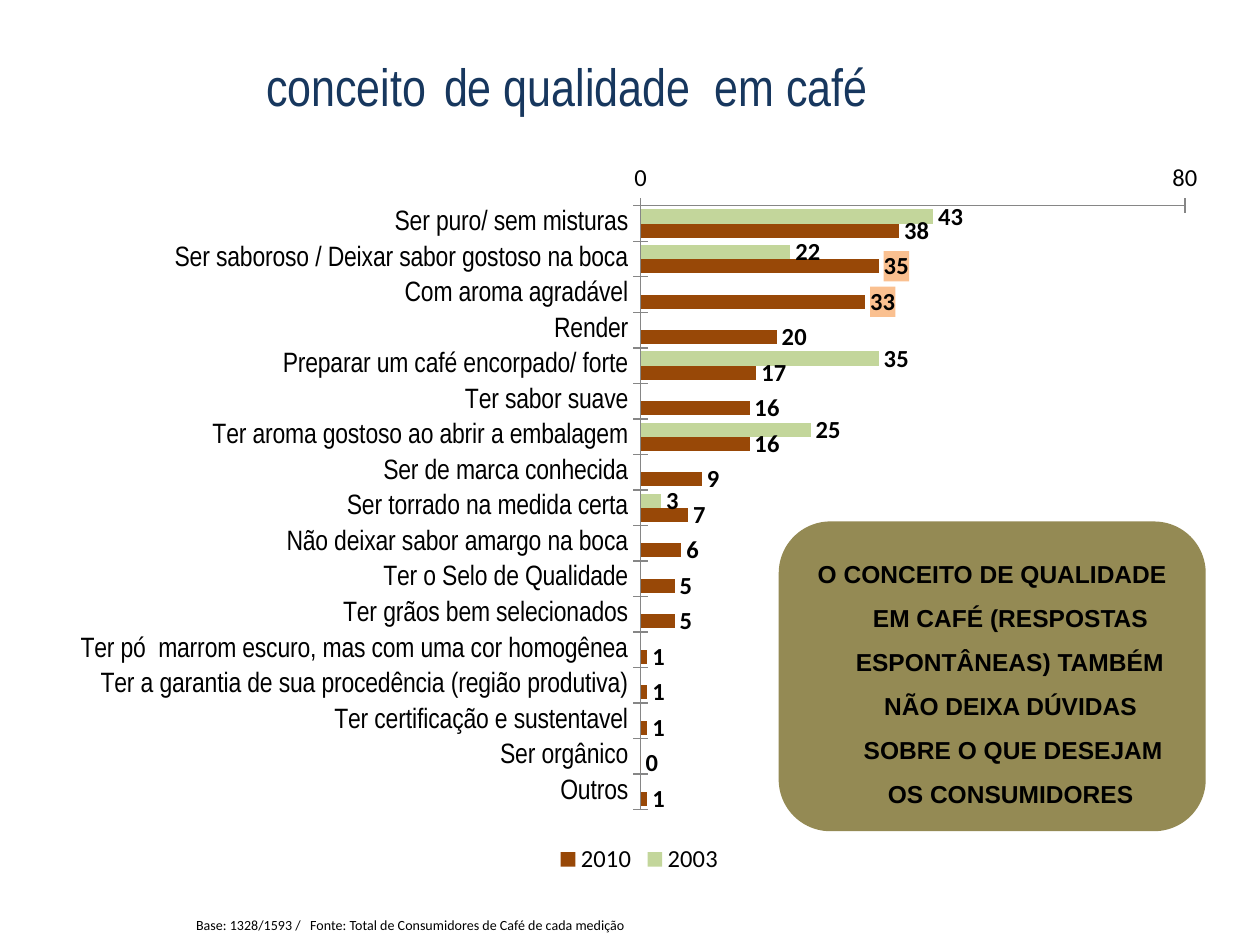
import pptx
import pptx.chart.data
import pptx.dml.color
import pptx.enum.chart
import pptx.enum.shapes
import pptx.enum.text
import pptx.oxml
import pptx.oxml.ns
import pptx.util

Pt = pptx.util.Pt
RGBColor = pptx.dml.color.RGBColor
BLACK = RGBColor(0, 0, 0)
NAVY = RGBColor(0x17, 0x37, 0x5E)
GREEN = RGBColor(0xC3, 0xD6, 0x9B)
BROWN = RGBColor(0x98, 0x48, 0x07)
OLIVE = RGBColor(0x94, 0x8A, 0x54)
PEACH = RGBColor(0xFA, 0xC0, 0x90)
GREY = RGBColor(0x86, 0x86, 0x86)

ANSWERS = [
    ("Ser puro/ sem misturas", 43, 38),
    ("Ser saboroso / Deixar sabor gostoso na boca", 22, 35),
    ("Com aroma agradável", None, 33),
    ("Render", None, 20),
    ("Preparar um café encorpado/ forte", 35, 17),
    ("Ter sabor suave", None, 16),
    ("Ter aroma gostoso ao abrir a embalagem", 25, 16),
    ("Ser de marca conhecida", None, 9),
    ("Ser torrado na medida certa", 3, 7),
    ("Não deixar sabor amargo na boca", None, 6),
    ("Ter o Selo de Qualidade", None, 5),
    ("Ter grãos bem selecionados", None, 5),
    ("Ter pó  marrom escuro, mas com uma cor homogênea", None, 1),
    ("Ter a garantia de sua procedência (região produtiva)", None, 1),
    ("Ter certificação e sustentavel", None, 1),
    ("Ser orgânico", None, 0),
    ("Outros", None, 1),
]
HIGHLIGHTED = (1, 2)


def set_font(font, size, name="Calibri", color=BLACK, bold=False):
    font.size, font.name, font.bold = Pt(size), name, bold
    font.color.rgb = color


def add_run(p, text, *style, **options):
    r = p.add_run()
    r.text = text
    set_font(r.font, *style, **options)


prs = pptx.Presentation()
prs.slide_width, prs.slide_height = Pt(720), Pt(540)
s = prs.slides.add_slide(prs.slide_layouts[6])

# Chart
data = pptx.chart.data.CategoryChartData(number_format="0")
data.categories = [label for label, _, _ in ANSWERS]
data.add_series("2003", [old for _, old, _ in ANSWERS])
data.add_series("2010", [new for _, _, new in ANSWERS])
chart = s.shapes.add_chart(
    pptx.enum.chart.XL_CHART_TYPE.BAR_CLUSTERED,
    Pt(31), Pt(82.8), Pt(668.9), Pt(419.8), data).chart
set_font(chart.font, 11)
chart.has_title = False
chart.has_legend = True
chart.legend.position = pptx.enum.chart.XL_LEGEND_POSITION.BOTTOM
chart.legend.include_in_layout = False
set_font(chart.legend.font, 14)

cat_axis, val_axis = chart.category_axis, chart.value_axis
cat_axis.reverse_order = True
set_font(cat_axis.tick_labels.font, 16, "Arial Narrow")
val_axis.minimum_scale, val_axis.maximum_scale, val_axis.major_unit = 0, 80, 80
val_axis.has_major_gridlines = False
val_axis.tick_labels.number_format = "0"
val_axis.tick_labels.number_format_is_linked = False
set_font(val_axis.tick_labels.font, 14)
for axis in (cat_axis, val_axis):
    axis.major_tick_mark = pptx.enum.chart.XL_TICK_MARK.CROSS
    axis.format.line.color.rgb = GREY
    axis.format.line.width = Pt(0.75)

plot = chart.plots[0]
plot.gap_width, plot.overlap = 51, 0
plot.vary_by_categories = False
for series, color in zip(plot.series, (GREEN, BROWN)):
    series.format.fill.solid()
    series.format.fill.fore_color.rgb = color
    labels = series.data_labels
    labels.show_value = True
    labels.number_format, labels.number_format_is_linked = "0", False
    labels.position = pptx.enum.chart.XL_LABEL_POSITION.OUTSIDE_END
    set_font(labels.font, 14, bold=True)

qn = pptx.oxml.ns.qn
ns = pptx.oxml.ns.nsdecls("c", "a")
for i in HIGHLIGHTED:
    label = plot.series[1].points[i].data_label
    set_font(label.font, 14, bold=True)
    label.position = pptx.enum.chart.XL_LABEL_POSITION.OUTSIDE_END
for text_props in plot.series[1].data_labels._element.findall(
        qn("c:dLbl") + "/" + qn("c:txPr")):
    text_props.addprevious(pptx.oxml.parse_xml(
        f'<c:spPr {ns}><a:solidFill><a:srgbClr val="{PEACH}"/></a:solidFill></c:spPr>'))

plot_area = chart._chartSpace.chart.plotArea
for layout in plot_area.findall(qn("c:layout")):
    plot_area.remove(layout)
plot_area.insert(0, pptx.oxml.parse_xml(
    f'<c:layout {ns}><c:manualLayout><c:layoutTarget val="inner"/>'
    '<c:xMode val="edge"/><c:yMode val="edge"/><c:x val="0.501"/><c:y val="0.083"/>'
    '<c:w val="0.465"/><c:h val="0.822"/></c:manualLayout></c:layout>'))

# Title
tf = s.shapes.add_textbox(Pt(0), Pt(20), Pt(648), Pt(46)).text_frame
tf.word_wrap = True
tf.vertical_anchor = pptx.enum.text.MSO_ANCHOR.MIDDLE
p = tf.paragraphs[0]
p.alignment = pptx.enum.text.PP_ALIGN.CENTER
add_run(p, "conceito", 30, "Arial Narrow", NAVY)
add_run(p, " ", 44, "Arial Narrow")
add_run(p, "de qualidade  em café", 30, "Arial Narrow", NAVY)

# Source note
tf = s.shapes.add_textbox(Pt(105), Pt(520), Pt(590), Pt(17)).text_frame
tf.word_wrap = True
add_run(tf.paragraphs[0],
        "Base: 1328/1593 /   Fonte: Total de Consumidores de Café de cada medição", 8)

# Conclusion
sp = s.shapes.add_shape(pptx.enum.shapes.MSO_SHAPE.ROUNDED_RECTANGLE,
                        Pt(445), Pt(298), Pt(244), Pt(177))
sp.shadow.inherit = False
sp.fill.solid()
sp.fill.fore_color.rgb = OLIVE
sp.line.fill.background()
tf = sp.text_frame
tf.word_wrap = True
tf.vertical_anchor = pptx.enum.text.MSO_ANCHOR.MIDDLE
conclusion = [
    ("O CONCEITO DE QUALIDADE EM CAFÉ (RESPOSTAS", -21),
    ("ESPONTÂNEAS) TAMBÉM  NÃO DEIXA DÚVIDAS", 3),
    ("SOBRE O QUE DESEJAM OS CONSUMIDORES", 3),
]
for i, (text, indent) in enumerate(conclusion):
    p = tf.add_paragraph() if i else tf.paragraphs[0]
    p.alignment = pptx.enum.text.PP_ALIGN.CENTER
    p.line_spacing = 1.5
    props = p._p.get_or_add_pPr()
    props.set("marL", str(Pt(21)))
    props.set("indent", str(Pt(indent)))
    add_run(p, text, 14, "Arial", bold=True)

prs.save("out.pptx")
